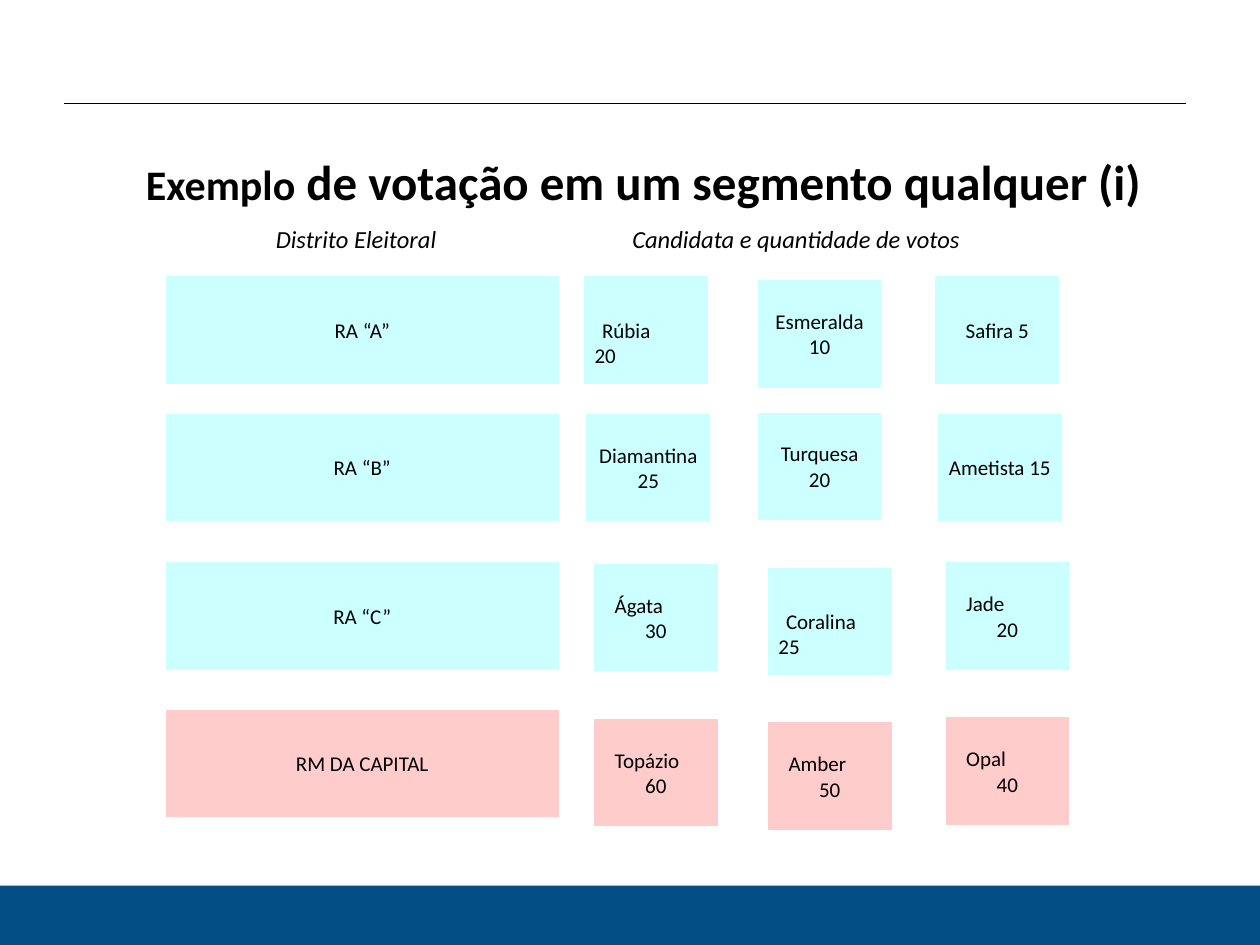
from pptx import Presentation
from pptx.dml.color import RGBColor
from pptx.enum.shapes import MSO_CONNECTOR as LINE, MSO_SHAPE as SHAPE
from pptx.enum.text import MSO_ANCHOR as ANCHOR, PP_ALIGN as ALIGN
from pptx.oxml import parse_xml
from pptx.oxml.ns import nsdecls
from pptx.util import Inches, Pt

W, H = 10, 7.5
FONT = "Calibri"
COLORS = {"text": "000000", "white": "FFFFFF", "footer": "034E84",
          "cyan": "CCFFFF", "pink": "FFCCCC"}
CARD_H = 0.88            # height of every district and candidate box
DISTRICT_W, CARD_W = 3.15, 1.01
CARD_COLS = (3.32, 4.70, 6.11)   # candidate columns, from the grid's left

# District, top, colour, then candidates: name, votes, layout, nudge from the grid
ROWS = [
    ("RA “A”", 0, "cyan", [("Rúbia", 20, "low", 0, 0),
                           ("Esmeralda", 10, "center", 0, 0.03),
                           ("Safira", 5, "center", 0, 0)]),
    ("RA “B”", 1.09, "cyan", [("Diamantina", 25, "center", 0.02, 0),
                              ("Turquesa", 20, "center", 0, -0.01),
                              ("Ametista", 15, "center", 0.02, 0)]),
    ("RA “C”", 2.27, "cyan", [("Ágata", 30, "split", 0.08, 0.01),
                              ("Coralina", 25, "low", 0.08, 0.04),
                              ("Jade", 20, "split", 0.08, 0)]),
    ("RM DA CAPITAL", 3.44, "pink", [("Topázio", 60, "split", 0.08, 0.07),
                                     ("Amber", 50, "split", 0.08, 0.10),
                                     ("Opal", 40, "split", 0.08, 0.06)]),
]


def rgb(name):
    return RGBColor.from_string(COLORS[name])


def add_text(p, text, size=12, bold=False, italic=False, align=None, indent=0):
    r = p.add_run()
    r.text = text
    r.font.name, r.font.size = FONT, Pt(size)
    r.font.bold, r.font.italic = bold, italic
    r.font.color.rgb = rgb("text")
    if align is not None:
        p.alignment = align
    if indent:
        p._p.get_or_add_pPr().set("marL", str(Inches(indent)))


def add_box(s, box, fill, border=True):
    sp = s.shapes.add_shape(SHAPE.RECTANGLE, *map(Inches, box))
    sp.shadow.inherit = False
    sp.fill.solid()
    sp.fill.fore_color.rgb = rgb(fill)
    if border:
        sp.line.color.rgb, sp.line.width = rgb("white"), Pt(2)
    else:
        sp.line.fill.background()
    tf = sp.text_frame
    tf.word_wrap, tf.vertical_anchor = True, ANCHOR.MIDDLE
    return tf


def add_label(s, box, runs, **fmt):
    tf = s.shapes.add_textbox(*map(Inches, box)).text_frame
    tf.word_wrap = True
    for text, size in runs:
        add_text(tf.paragraphs[0], text, size, **fmt)


def add_card(s, box, fill, name, votes, layout):
    tf = add_box(s, box, fill)
    p = tf.paragraphs[0]
    if layout == "center":
        add_text(p, f"{name} {votes}", align=ALIGN.CENTER)
        return
    low = layout == "low"
    if low:
        tf.margin_top = Inches(0.25)
    add_text(p, name, align=ALIGN.LEFT, indent=0.06 if low else 0.08)
    add_text(tf.add_paragraph(), str(votes),
             align=ALIGN.LEFT if low else ALIGN.CENTER)


def add_frame(s):
    # Footer band and top rule
    add_box(s, (0, 7.03, W, H - 7.03), "footer", border=False)
    c = s.shapes.add_connector(LINE.STRAIGHT, *map(Inches, (0.51, 0.82, 9.41, 0.82)))
    c.line.color.rgb, c.line.width = rgb("text"), Pt(0.75)
    c._element.spPr.append(parse_xml(f"<a:effectLst {nsdecls('a')}/>"))


def add_headings(s, left, top):
    add_label(s, (left, top, 8.43, CARD_H),
              [("Exemplo", 24), (" de votação em um segmento qualquer (i)", 28)],
              bold=True)
    for dx, width, text in [(1.03, 1.89, "Distrito Eleitoral"),
                            (3.86, 3.78, "Candidata e quantidade de votos")]:
        add_label(s, (left + dx, top + 0.58, width, 0.34), [(text, 14)], italic=True)


def add_votes(s, left, top):
    for district, dy, fill, cards in ROWS:
        y = top + dy
        tf = add_box(s, (left, y, DISTRICT_W, CARD_H), fill)
        add_text(tf.paragraphs[0], district, align=ALIGN.CENTER)
        for col, (name, votes, layout, nx, ny) in zip(CARD_COLS, cards):
            box = (left + col + nx, y + ny, CARD_W, CARD_H)
            add_card(s, box, fill, name, votes, layout)


def main():
    prs = Presentation()
    prs.slide_width, prs.slide_height = Inches(W), Inches(H)
    s = prs.slides.add_slide(prs.slide_layouts[6])
    add_frame(s)
    add_headings(s, 1.06, 1.15)
    add_votes(s, 1.3, 2.18)
    prs.save("out.pptx")


if __name__ == "__main__":
    main()
